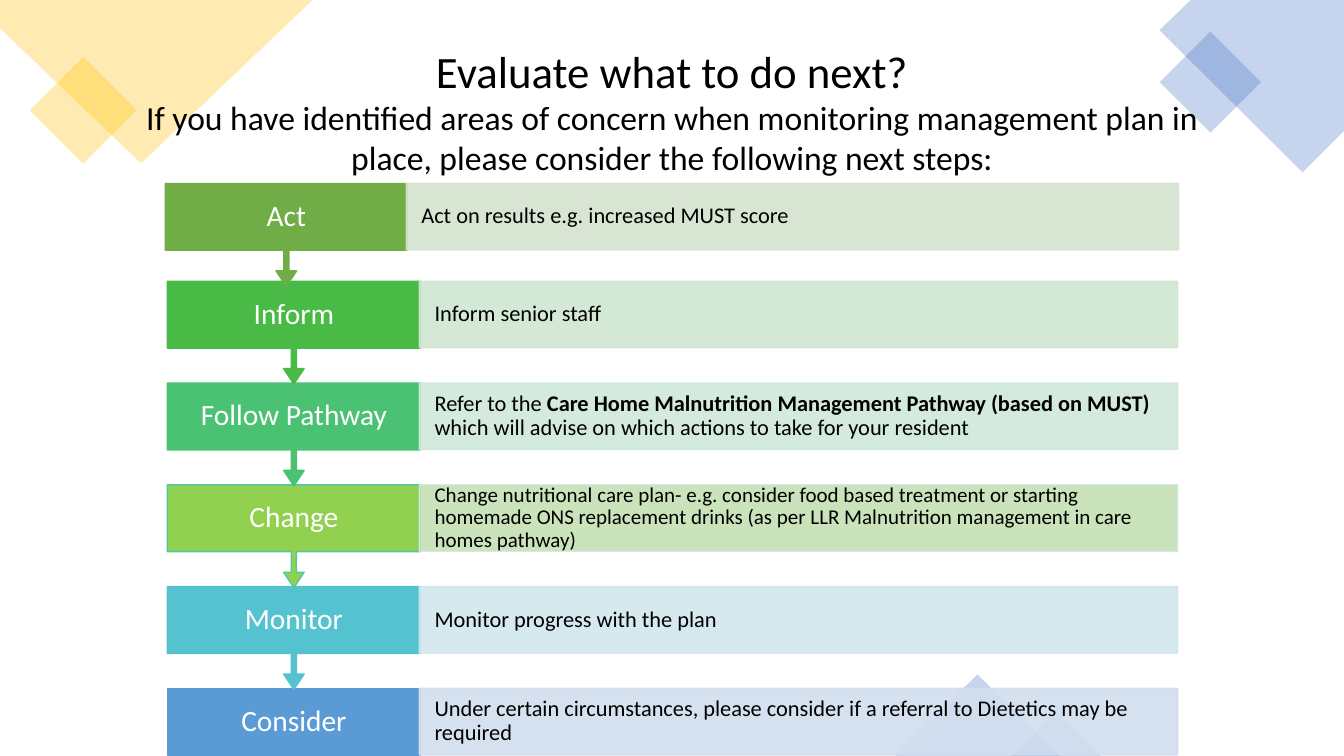
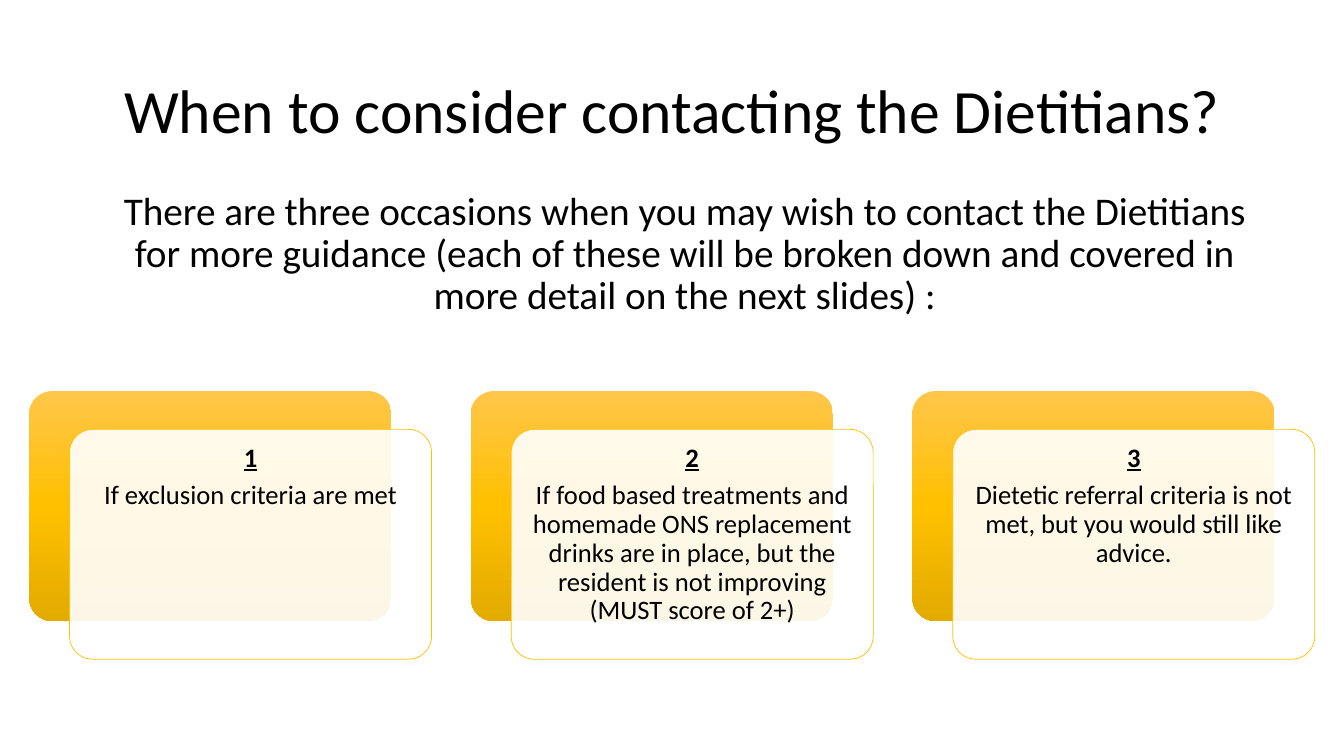
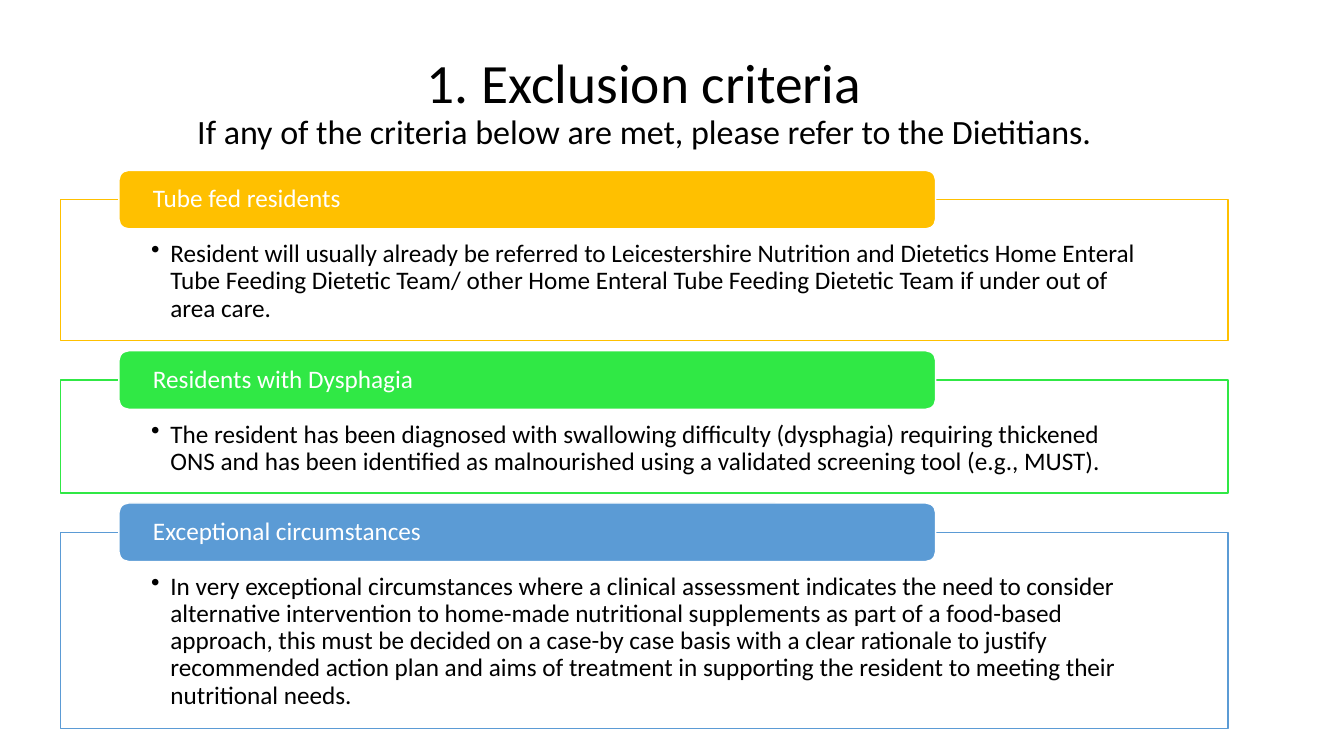
import copy

import lxml.etree
import pptx
import pptx.dml.color
import pptx.enum.shapes
import pptx.enum.text
import pptx.oxml.ns
import pptx.util

Inches = pptx.util.Inches
Pt = pptx.util.Pt
RGBColor = pptx.dml.color.RGBColor
Shape = pptx.enum.shapes.MSO_SHAPE
Align = pptx.enum.text.PP_ALIGN
Anchor = pptx.enum.text.MSO_ANCHOR
qn = pptx.oxml.ns.qn

FONT = "Calibri"
BLACK = RGBColor(0x00, 0x00, 0x00)
WHITE = RGBColor(0xFF, 0xFF, 0xFF)
AMBER = RGBColor(0xFF, 0xC0, 0x00)
AMBER_LIGHT = RGBColor(0xFF, 0xC6, 0x4B)
AMBER_DARK = RGBColor(0xE3, 0xAB, 0x00)
ROYAL = RGBColor(0x44, 0x72, 0xC4)
BLUE = RGBColor(0x5B, 0x9B, 0xD5)
BLUE_PALE = RGBColor(0xD2, 0xDE, 0xEF)
TEAL = RGBColor(0x55, 0xC3, 0xCF)
TEAL_PALE = RGBColor(0xD1, 0xE7, 0xED)
LIME = RGBColor(0x92, 0xD0, 0x50)
LIME_EDGE = RGBColor(0x50, 0xC8, 0xA7)
LIME_PALE = RGBColor(0xC5, 0xE0, 0xB4)
LIME_PALE_EDGE = RGBColor(0xD0, 0xEB, 0xE6)
JADE = RGBColor(0x4B, 0xC1, 0x74)
JADE_PALE = RGBColor(0xD0, 0xE8, 0xDB)
GREEN = RGBColor(0x4A, 0xBA, 0x46)
GREEN_PALE = RGBColor(0xCF, 0xE6, 0xD1)
OLIVE = RGBColor(0x70, 0xAD, 0x47)
OLIVE_PALE = RGBColor(0xD5, 0xE3, 0xCF)
BRIGHT_GREEN = RGBColor(0x30, 0xE8, 0x45)

LOWER_STEPS = [
    ("Inform", GREEN, GREEN, GREEN_PALE, GREEN_PALE, 16, ["Inform senior staff"]),
    ("Follow Pathway", JADE, JADE, JADE_PALE, JADE_PALE, 16, [
        "Refer to the ",
        "Care Home Malnutrition Management Pathway (based on MUST) ",
        "which will advise on which actions to take for your resident"]),
    ("Change", LIME, LIME_EDGE, LIME_PALE, LIME_PALE_EDGE, 15, [
        "Change nutritional care plan- e.g. consider food based treatment or starting "
        "homemade ONS replacement drinks (as per LLR Malnutrition management in care "
        "homes pathway)"]),
    ("Monitor", TEAL, TEAL, TEAL_PALE, TEAL_PALE, 16, ["Monitor progress with the plan"]),
    ("Consider", BLUE, BLUE, BLUE_PALE, BLUE_PALE, 16, [
        "Under certain circumstances, please consider if a referral to Dietetics may be "
        "required"]),
]
ACT_STEP = ("Act", OLIVE, OLIVE, OLIVE_PALE, OLIVE_PALE, 16,
            ["Act on results e.g. increased MUST score"])

OCCASIONS = [
    "If exclusion criteria are met",
    "If food based treatments and homemade ONS replacement drinks are in place, but the "
    "resident is not improving (MUST score of 2+)",
    "Dietetic referral criteria is not met, but you would still like advice.",
]

CRITERIA = [
    ("Tube fed residents", AMBER, 1.4,
     "Resident will usually already be referred to Leicestershire Nutrition and Dietetics "
     "Home Enteral Tube Feeding Dietetic Team/ other Home Enteral Tube Feeding Dietetic "
     "Team if under out of area care."),
    ("Residents with Dysphagia", BRIGHT_GREEN, 1.12,
     "The resident has been diagnosed with swallowing difficulty (dysphagia) requiring "
     "thickened ONS and has been identified as malnourished using a validated screening "
     "tool (e.g., MUST)."),
    ("Exceptional circumstances", BLUE, 1.95,
     "In very exceptional circumstances where a clinical assessment indicates the need to "
     "consider alternative intervention to home-made nutritional supplements as part of a "
     "food-based approach, this must be decided on a case-by case basis with a clear "
     "rationale to justify recommended action plan and aims of treatment in supporting the "
     "resident to meeting their nutritional needs."),
]


def set_opacity(element, percent):
    """Give every solid colour under the element an opacity."""
    for color in element.iter(qn("a:srgbClr")):
        alpha = lxml.etree.SubElement(color, qn("a:alpha"))
        alpha.set("val", str(percent * 1000))


def paint(shape, fill, opacity=100, line=None, width=1, line_opacity=100):
    """Fill and outline a shape without shadow."""
    shape.shadow.inherit = False
    shape.fill.solid()
    shape.fill.fore_color.rgb = fill
    if opacity < 100:
        set_opacity(shape._element.spPr.find(qn("a:solidFill")), opacity)
    if line is None:
        shape.line.fill.background()
        return
    shape.line.color.rgb = line
    shape.line.width = Pt(width)
    if line_opacity < 100:
        set_opacity(shape._element.spPr.find(qn("a:ln")), line_opacity)


def add_box(page, kind, left, top, width, height):
    """Add a preset shape measured in inches."""
    return page.shapes.add_shape(
        kind, Inches(left), Inches(top), Inches(width), Inches(height))


def set_frame(shape, insets, anchor):
    """Set wrapping, insets (left, top, right, bottom) and anchor of a text frame."""
    frame = shape.text_frame
    frame.word_wrap = True
    frame.vertical_anchor = anchor
    (frame.margin_left, frame.margin_top,
     frame.margin_right, frame.margin_bottom) = [Inches(inset) for inset in insets]
    return frame


def style(para, size, color=BLACK, align=Align.LEFT, spacing=0.9):
    """Set the alignment, spacing and font of a paragraph."""
    para.alignment = align
    para.line_spacing = spacing
    para.font.name = FONT
    para.font.size = Pt(size)
    para.font.color.rgb = color


def add_heading(page, left, top, width, height, lines, anchor=Anchor.MIDDLE, spacing=0.9):
    """Add centred heading lines given as (text, size)."""
    box = page.shapes.add_textbox(Inches(left), Inches(top), Inches(width), Inches(height))
    frame = set_frame(box, (0.1, 0.05, 0.1, 0.05), anchor)
    for index, (text, size) in enumerate(lines):
        para = frame.add_paragraph() if index else frame.paragraphs[0]
        para.text = text
        style(para, size, align=Align.CENTER, spacing=spacing)


def add_polygon(page, points, fill):
    """Add a translucent closed outline through the points."""
    corners = [(Inches(x), Inches(y)) for x, y in points]
    builder = page.shapes.build_freeform(*corners[0])
    builder.add_line_segments(corners[1:], close=True)
    paint(builder.convert_to_shape(), fill, 30)


def add_corner_decoration(page):
    """Add the translucent diamonds and triangles at the page edges."""
    add_polygon(page, [(0, 0), (3.1, 0), (1.4, 1.62), (0, 0.28)], AMBER)
    add_polygon(page, [(11.81, 0), (13.33, 0), (13.33, 1.3), (12.92, 1.71), (11.5, 0.3)],
                ROYAL)
    for left, top, side, color in [(0.45, 0.72, 0.75, AMBER), (11.65, 0.46, 0.71, ROYAL)]:
        diamond = add_box(page, Shape.RECTANGLE, left, top, side, side)
        diamond.rotation = 45
        paint(diamond, color, 30)
    for left, top, width, height in [(8.88, 6.69, 1.63, 0.81), (10.03, 7.06, 0.89, 0.44)]:
        paint(add_box(page, Shape.ISOSCELES_TRIANGLE, left, top, width, height), ROYAL, 30)


def add_step(page, left, top, label_width, detail_width, step, last=False):
    """Add a labelled step, with an arrow below unless last, and its detail bar."""
    label, color, edge, pale, pale_edge, size, spans = step
    if last:
        marker = add_box(page, Shape.RECTANGLE, left, top, label_width, 0.66)
    else:
        marker = add_box(page, Shape.DOWN_ARROW_CALLOUT, left, top, label_width, 1.02)
        for index, value in enumerate((0.05, 0.1, 0.15, 0.65)):
            marker.adjustments[index] = value
    paint(marker, color, line=edge)
    para = set_frame(marker, (0.18, 0, 0.18, 0), Anchor.MIDDLE).paragraphs[0]
    para.text = label
    style(para, 21, WHITE, Align.CENTER)

    detail = add_box(page, Shape.RECTANGLE, left + label_width - 0.01, top,
                     detail_width, 0.66)
    paint(detail, pale, 90, pale_edge, line_opacity=90)
    para = set_frame(detail, (0.15, 0, 0.15, 0), Anchor.MIDDLE).paragraphs[0]
    style(para, size)
    for index, text in enumerate(spans):
        span = para.add_run()
        span.text = text
        if index == 1:
            span.font.bold = True


def fill_gradient(shape):
    """Fill a shape with the vertical amber gradient."""
    shape.shadow.inherit = False
    shape.line.fill.background()
    shape.fill.gradient()
    shape.fill.gradient_angle = 270
    stop_list = shape._element.spPr.find(qn("a:gradFill")).find(qn("a:gsLst"))
    stop_list.append(copy.deepcopy(stop_list[-1]))
    colors = (AMBER_LIGHT, AMBER, AMBER_DARK)
    for index, (stop, color) in enumerate(zip(shape.fill.gradient_stops, colors)):
        stop.position = index / 2
        stop.color.rgb = color


def add_card(page, left, top, number, text):
    """Add a numbered white card over an amber backing card."""
    width, height = 3.59, 2.28
    backing = add_box(page, Shape.ROUNDED_RECTANGLE, left, top, width, height)
    fill_gradient(backing)
    front = add_box(page, Shape.ROUNDED_RECTANGLE, left + 0.4, top + 0.38, width, height)
    paint(front, WHITE, 90, AMBER, 0.5)
    for card in (backing, front):
        card.adjustments[0] = 0.1
    frame = set_frame(front, (0.08,) * 4, Anchor.TOP)
    heading = frame.paragraphs[0]
    heading.text = str(number)
    heading.space_after = Pt(6.5)
    style(heading, 19, align=Align.CENTER)
    heading.font.bold = True
    heading.font.underline = True
    body = frame.add_paragraph()
    body.text = text
    style(body, 19, align=Align.CENTER)


def add_criterion(page, left, top, height, title, color, text):
    """Add a framed bullet with a coloured tab over its top edge."""
    panel = add_box(page, Shape.RECTANGLE, left, top, 11.58, height)
    paint(panel, WHITE, 90, color)
    para = set_frame(panel, (0.9, 0.41, 0.9, 0.14), Anchor.TOP).paragraphs[0]
    para.text = text
    properties = para._p.get_or_add_pPr()
    properties.set("marL", str(Inches(0.19)))
    properties.set("indent", str(Inches(-0.19)))
    lxml.etree.SubElement(properties, qn("a:buChar")).set("char", "•")
    style(para, 18)

    tab = add_box(page, Shape.ROUNDED_RECTANGLE, left + 0.58, top - 0.29, 8.1, 0.58)
    paint(tab, color, line=WHITE)
    para = set_frame(tab, (0.31, 0, 0.31, 0), Anchor.MIDDLE).paragraphs[0]
    para.text = title
    style(para, 18, WHITE)


def build_next_steps(page):
    """Build the chain of next steps."""
    add_corner_decoration(page)
    last = len(LOWER_STEPS) - 1
    for index in range(last, -1, -1):
        add_step(page, 1.66, 2.79 + 1.01 * index, 2.51, 7.52, LOWER_STEPS[index],
                 last=index == last)
    add_step(page, 1.64, 1.82, 2.4, 7.66, ACT_STEP)
    add_heading(page, 1.12, 0.38, 11.09, 1.45, [
        ("Evaluate what to do next?", 32),
        ("If you have identified areas of concern when monitoring management plan in "
         "place, please consider the following next steps:", 24)], Anchor.TOP, 1.0)


def build_occasions(page):
    """Build the three occasions for contacting the Dietitians."""
    add_heading(page, 0.92, 0.4, 11.5, 1.45,
                [("When to consider contacting the Dietitians?", 44)])
    add_heading(page, 1.04, 1.85, 11.5, 1.63, [
        ("There are three occasions when you may wish to contact the Dietitians for more "
         "guidance (each of these will be broken down and covered in more detail on the "
         "next slides) :", 28)], Anchor.TOP)
    for index, text in enumerate(OCCASIONS):
        add_card(page, 0.29 + 4.38 * index, 3.88, index + 1, text)


def build_exclusion(page):
    """Build the list of exclusion criteria."""
    add_heading(page, 0.64, 0.47, 11.5, 1.12, [
        ("1. Exclusion criteria", 39.6),
        ("If any of the criteria below are met, please refer to the Dietitians.", 24.3)])
    top = 1.98
    for title, color, height, text in CRITERIA:
        add_criterion(page, 0.6, top, height, title, color, text)
        top += height + 0.39


def main():
    """Build and save the deck."""
    deck = pptx.Presentation()
    deck.slide_width = Inches(13.33)
    deck.slide_height = Inches(7.5)
    for build in (build_next_steps, build_occasions, build_exclusion):
        build(deck.slides.add_slide(deck.slide_layouts[6]))
    deck.save("out.pptx")


if __name__ == "__main__":
    main()
